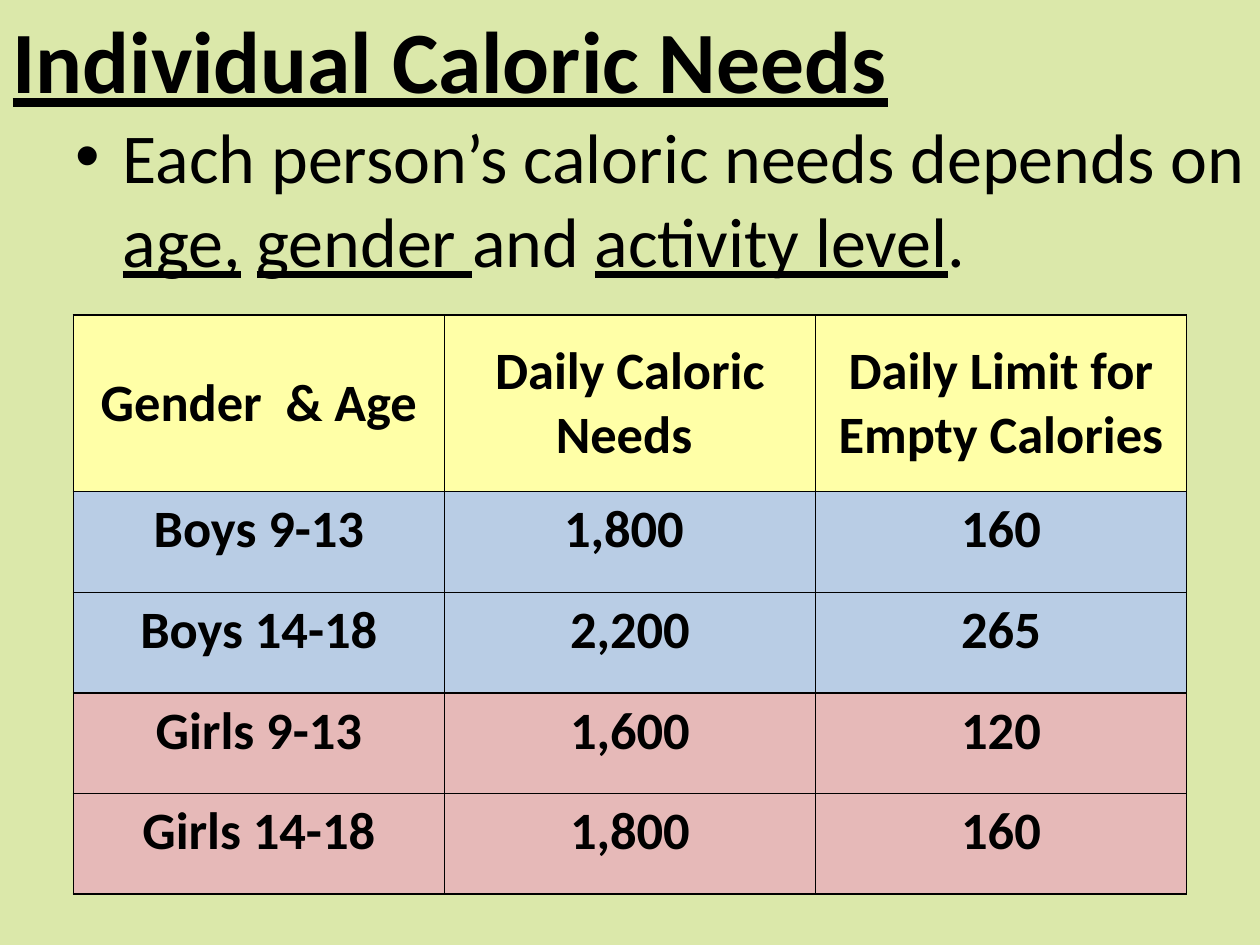
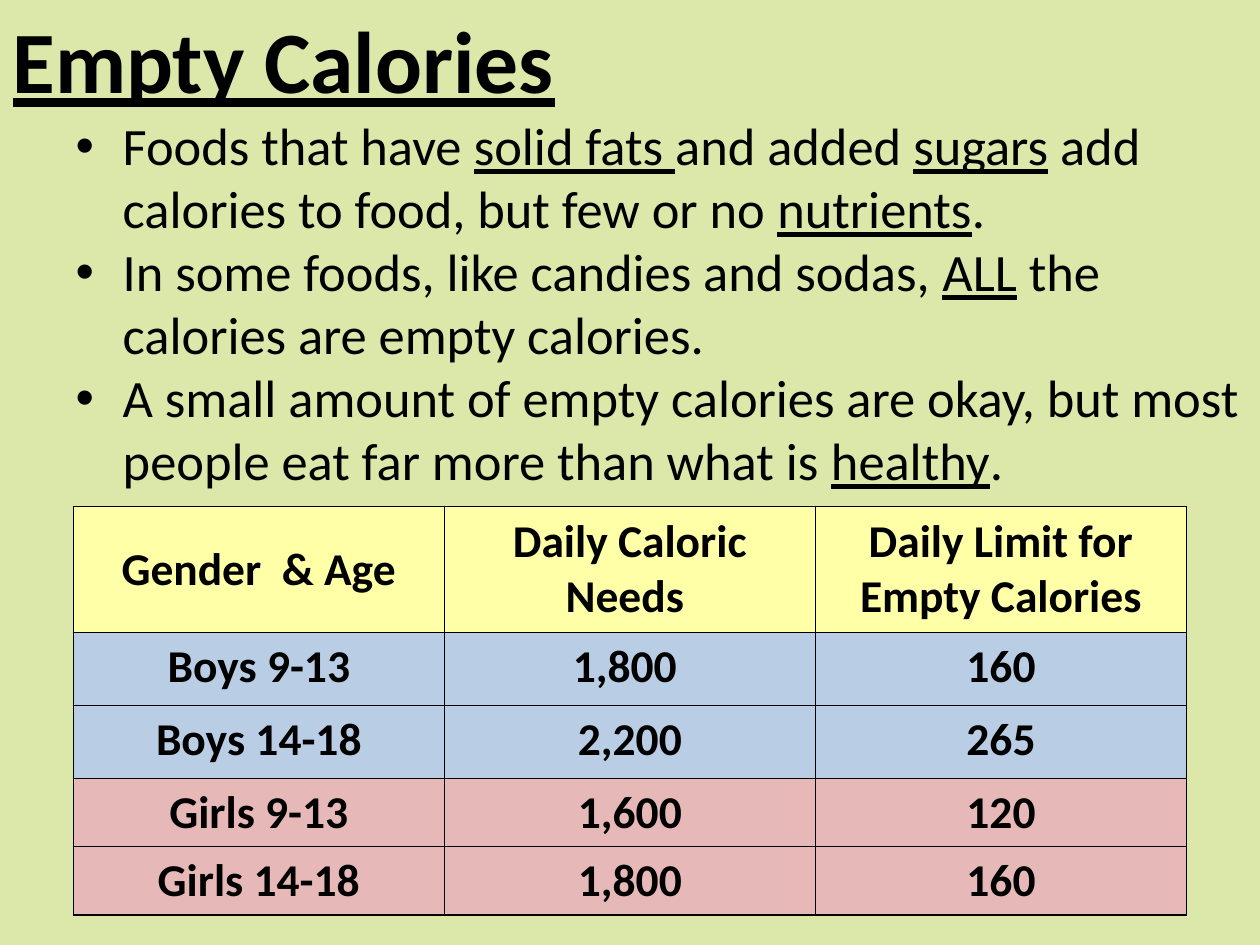
import dataclasses

import lxml.etree
import pptx
import pptx.dml.color
import pptx.enum.text
import pptx.oxml.ns
import pptx.util

Cm = pptx.util.Cm
Pt = pptx.util.Pt


@dataclasses.dataclass(frozen=True)
class Theme:
    font: str = "Calibri"
    background: str = "DBE8AA"
    text: str = "000000"
    border: str = "000000"
    header: str = "FFFFA7"
    boys: str = "B9CDE5"
    girls: str = "E6B9B8"
    title_size: int = 50


theme = Theme()


def format_font(font, size, bold):
    font.name = theme.font
    font.size = Pt(size)
    font.bold = bold
    font.color.rgb = pptx.dml.color.RGBColor.from_string(theme.text)


def add_element(parent, tag, **attributes):
    return lxml.etree.SubElement(parent, pptx.oxml.ns.qn(tag), attributes)


calorie_rows = [
    (theme.header, ["Gender  & Age", "Daily Caloric Needs ", "Daily Limit for Empty Calories"]),
    (theme.boys, ["Boys 9-13", "1,800 ", "160"]),
    (theme.boys, ["Boys 14-18", "2,200", "265"]),
    (theme.girls, ["Girls 9-13", "1,600", "120"]),
    (theme.girls, ["Girls 14-18", "1,800", "160"]),
]

# Underscores enclose the underlined words.
slides = [
    {
        "title": "Individual Caloric Needs",
        "bullets": ["Each person’s caloric needs depends on _age,_ _gender _and _activity level_."],
        "bullet_size": 40,
        "body_height": 3.66,
        "table_top": 6.35,
        "table_size": 30,
        "row_heights": [3.56, 2.03, 2.03, 2.03, 2.03],
    },
    {
        "title": "Empty Calories",
        "bullets": [
            "Foods that have _solid fats _and added _sugars_ add calories to food, but few or no _nutrients_.",
            "In some foods, like candies and sodas, _ALL_ the calories are empty calories.",
            "A small amount of empty calories are okay, but most people eat far more than what is _healthy_.",
        ],
        "bullet_size": 30,
        "body_height": 7.92,
        "table_top": 10.21,
        "table_size": 26,
        "row_heights": [2.54, 1.47, 1.47, 1.36, 1.36],
    },
]

presentation = pptx.Presentation()
presentation.slide_width = Cm(25.4)
presentation.slide_height = Cm(19.05)
layout = presentation.slide_layouts.get_by_name("Title and Content")

for content in slides:
    slide = presentation.slides.add_slide(layout)
    background = slide.background.fill
    background.solid()
    background.fore_color.rgb = pptx.dml.color.RGBColor.from_string(theme.background)

    title = slide.shapes.title
    body = slide.placeholders[1]
    for shape, top, height in ((title, 0, 2.41), (body, 2.16, content["body_height"])):
        shape.left, shape.top = Cm(0), Cm(top)
        shape.width, shape.height = presentation.slide_width, Cm(height)
        shape.text_frame.word_wrap = True
        shape.text_frame.auto_size = pptx.enum.text.MSO_AUTO_SIZE.NONE
        shape.text_frame.vertical_anchor = pptx.enum.text.MSO_ANCHOR.TOP

    title.text_frame.text = content["title"]
    paragraph = title.text_frame.paragraphs[0]
    paragraph.alignment = pptx.enum.text.PP_ALIGN.LEFT
    format_font(paragraph.runs[0].font, theme.title_size, True)
    paragraph.runs[0].font.underline = True

    for index, bullet in enumerate(content["bullets"]):
        paragraph = body.text_frame.paragraphs[0] if index == 0 else body.text_frame.add_paragraph()
        properties = paragraph._p.get_or_add_pPr()
        properties.set("marL", str(Cm(2.22)))
        properties.set("indent", str(Cm(-0.95)))
        add_element(properties, "a:buFont", typeface="Arial")
        add_element(properties, "a:buChar", char="•")
        paragraph.space_before = Pt(0)
        for part, words in enumerate(bullet.split("_")):
            run = paragraph.add_run()
            run.text = words
            format_font(run.font, content["bullet_size"], False)
            run.font.underline = part % 2 == 1

    table = slide.shapes.add_table(
        len(calorie_rows), 3, Cm(1.48), Cm(content["table_top"]),
        Cm(3 * 7.48), Cm(sum(content["row_heights"])),
    ).table
    table.first_row = False
    table.horz_banding = False
    for column in table.columns:
        column.width = Cm(7.48)

    for row_index, (color, values) in enumerate(calorie_rows):
        table.rows[row_index].height = Cm(content["row_heights"][row_index])
        for column_index, value in enumerate(values):
            cell = table.cell(row_index, column_index)
            cell.text_frame.text = value
            cell.vertical_anchor = (
                pptx.enum.text.MSO_ANCHOR.MIDDLE if row_index == 0 else pptx.enum.text.MSO_ANCHOR.TOP
            )
            paragraph = cell.text_frame.paragraphs[0]
            paragraph.alignment = pptx.enum.text.PP_ALIGN.CENTER
            format_font(paragraph.runs[0].font, content["table_size"], True)
            for side in ("a:lnL", "a:lnR", "a:lnT", "a:lnB"):
                line = add_element(cell._tc.get_or_add_tcPr(), side, w=str(Pt(1)))
                add_element(add_element(line, "a:solidFill"), "a:srgbClr", val=theme.border)
            cell.fill.solid()
            cell.fill.fore_color.rgb = pptx.dml.color.RGBColor.from_string(color)

presentation.save("out.pptx")
